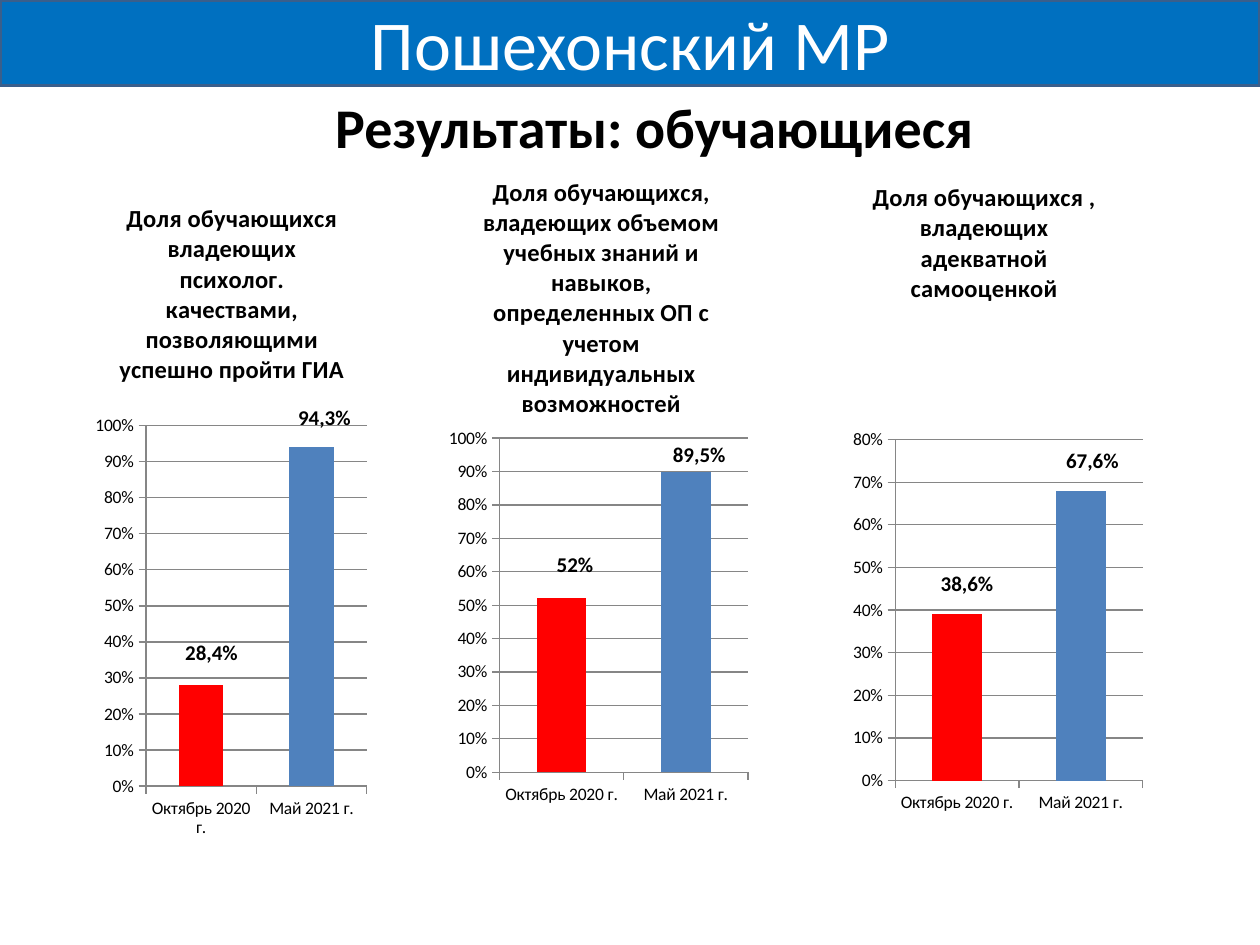
from pptx import Presentation
from pptx.chart.data import CategoryChartData
from pptx.dml.color import RGBColor
from pptx.enum.chart import XL_CHART_TYPE, XL_LABEL_POSITION, XL_TICK_MARK
from pptx.enum.shapes import MSO_SHAPE
from pptx.enum.text import MSO_ANCHOR, PP_ALIGN
from pptx.oxml import parse_xml
from pptx.oxml.ns import nsdecls, qn
from pptx.util import Cm, Pt

COLUMNS = XL_CHART_TYPE.COLUMN_CLUSTERED
OUTSIDE_END = XL_LABEL_POSITION.OUTSIDE_END
OUTSIDE = XL_TICK_MARK.OUTSIDE
NO_TICK = XL_TICK_MARK.NONE
RECTANGLE = MSO_SHAPE.RECTANGLE
MIDDLE, TOP = MSO_ANCHOR.MIDDLE, MSO_ANCHOR.TOP
CENTER, LEFT = PP_ALIGN.CENTER, PP_ALIGN.LEFT

FONT = "Calibri"
BLACK, WHITE, GRID = "000000", "FFFFFF", "868686"
BANNER, BANNER_EDGE = "0070C0", "3A5F8C"
BEFORE, AFTER = "FF0000", "4F81BD"
MONTHS = ("Октябрь 2020 г.", "Май 2021 г.")

RESULTS = (
    {
        "title": "Доля обучающихся владеющих психолог. качествами, "
                 "позволяющими успешно пройти ГИА",
        "box": (1.7, 3.53, 6.15, 14), "plot": (20.2, 36.1, 72.4, 51.9),
        "title_at": (10, 3.1), "shares": (0.28, 0.94), "top": 1,
        "labels": (("28,4%", 3.4, -2.1), ("94,3%", 4.2, -1.7)),
    },
    {
        "title": "Доля обучающихся, владеющих объемом учебных знаний и навыков, "
                 "определенных ОП с учетом индивидуальных возможностей",
        "box": (8.71, 3.43, 6.76, 13.89), "plot": (20.1, 38.9, 74.1, 48.5),
        "title_at": (13.9, 0), "shares": (0.52, 0.9), "top": 1,
        "labels": (("52%", 4, -2.3), ("89,5%", 4, 0.2)),
    },
    {
        "title": "Доля обучающихся , владеющих адекватной самооценкой",
        "box": (16.71, 3.53, 6.71, 14), "plot": (19.9, 38.1, 74.4, 49.1),
        "title_at": (11.8, 0.1), "shares": (0.39, 0.68), "top": 0.8,
        "labels": (("38,6%", 3, -1.8), ("67,6%", 3.5, -1.8)),
    },
)


def color(hex_code):
    """Return the RGB colour for a hex string."""
    return RGBColor.from_string(hex_code)


def style_font(font, size, hex_code=BLACK, bold=False):
    """Set the face, size, weight and colour of a font."""
    font.name, font.size, font.bold = FONT, Pt(size), bold
    font.color.rgb = color(hex_code)


def set_layout(parent, index, from_edge=False, **percents):
    """Give a chart part a manual layout in percent of the chart."""
    for previous in parent.findall(qn("c:layout")):
        parent.remove(previous)
    settings = {"layoutTarget": "inner"} if "w" in percents else {}
    if from_edge:
        settings.update(xMode="edge", yMode="edge")
    settings.update((key, f"{value / 100:g}") for key, value in percents.items())
    entries = "".join(f'<c:{key} val="{value}"/>' for key, value in settings.items())
    parent.insert(index, parse_xml(
        f'<c:layout {nsdecls("c")}><c:manualLayout>{entries}</c:manualLayout></c:layout>'))


def add_banner(slide, text):
    """Add the full-width district banner."""
    banner = slide.shapes.add_shape(RECTANGLE, 0, 0, Cm(25.4), Cm(1.73))
    banner.shadow.inherit = False
    banner.fill.solid()
    banner.fill.fore_color.rgb = color(BANNER)
    banner.line.color.rgb = color(BANNER_EDGE)
    banner.line.width = Pt(2)
    banner.text_frame.vertical_anchor = MIDDLE
    paragraph = banner.text_frame.paragraphs[0]
    paragraph.text, paragraph.alignment = text, CENTER
    style_font(paragraph.font, 40, WHITE)


def set_heading(slide, text):
    """Place the slide heading in the title placeholder."""
    heading = slide.shapes.title
    heading.left, heading.top = Cm(6.5), Cm(1.73)
    heading.width, heading.height = Cm(13.8), Cm(1.62)
    heading.text_frame.vertical_anchor = TOP
    paragraph = heading.text_frame.paragraphs[0]
    paragraph.text, paragraph.alignment = text, LEFT
    style_font(paragraph.font, 32, bold=True)


def style_axes(chart, top):
    """Format both axes and the gridlines."""
    shares, months = chart.value_axis, chart.category_axis
    shares.minimum_scale, shares.maximum_scale, shares.major_unit = 0, top, 0.1
    shares.tick_labels.number_format = "0%"
    shares.tick_labels.number_format_is_linked = False
    for axis in (shares, months):
        axis.major_tick_mark, axis.minor_tick_mark = OUTSIDE, NO_TICK
        style_font(axis.tick_labels.font, 10)
    for line in (shares.format.line, months.format.line,
                 shares.major_gridlines.format.line):
        line.color.rgb = color(GRID)
        line.width = Pt(0.75)


def style_columns(plot, labels):
    """Colour the columns and write their shifted labels."""
    plot.gap_width, plot.vary_by_categories = 150, False
    series = plot.series[0]
    for point_index, fill in enumerate((BEFORE, AFTER)):
        point = series.points[point_index]
        point.format.fill.solid()
        point.format.fill.fore_color.rgb = color(fill)
        run = point.data_label.text_frame.paragraphs[0].add_run()
        run.text = labels[point_index][0]
        style_font(run.font, 12, bold=True)
        point.data_label.position = OUTSIDE_END
    for label, (_, x, y) in zip(series._element.xpath("c:dLbls/c:dLbl"), labels):
        set_layout(label, 1, x=x, y=y)
    for leader in series._element.xpath("c:dLbls/c:showLeaderLines"):
        leader.set("val", "0")


def add_result_chart(slide, result):
    """Add one titled column chart comparing two months."""
    data = CategoryChartData(number_format="0%")
    data.categories = MONTHS
    data.add_series("Доля", result["shares"])
    box = [Cm(length) for length in result["box"]]
    chart = slide.shapes.add_chart(COLUMNS, *box, data).chart
    style_font(chart.font, 10)
    chart.has_legend = False
    chart.has_title = True
    title = chart.chart_title
    title.include_in_layout = False
    run = title.text_frame.paragraphs[0].add_run()
    run.text = result["title"]
    style_font(run.font, 14, bold=True)
    x, y = result["title_at"]
    set_layout(title._element, 1, from_edge=True, x=x, y=y)
    style_axes(chart, result["top"])
    style_columns(chart.plots[0], result["labels"])
    x, y, w, h = result["plot"]
    plot_area = chart._chartSpace.xpath("c:chart/c:plotArea")[0]
    set_layout(plot_area, 0, from_edge=True, x=x, y=y, w=w, h=h)


def main():
    """Build and save the slide."""
    presentation = Presentation()
    presentation.slide_width, presentation.slide_height = Cm(25.4), Cm(19.05)
    slide = presentation.slides.add_slide(presentation.slide_layouts[5])
    add_banner(slide, "Пошехонский МР")
    set_heading(slide, "Результаты: обучающиеся")
    for result in RESULTS:
        add_result_chart(slide, result)
    presentation.save("out.pptx")


if __name__ == "__main__":
    main()
